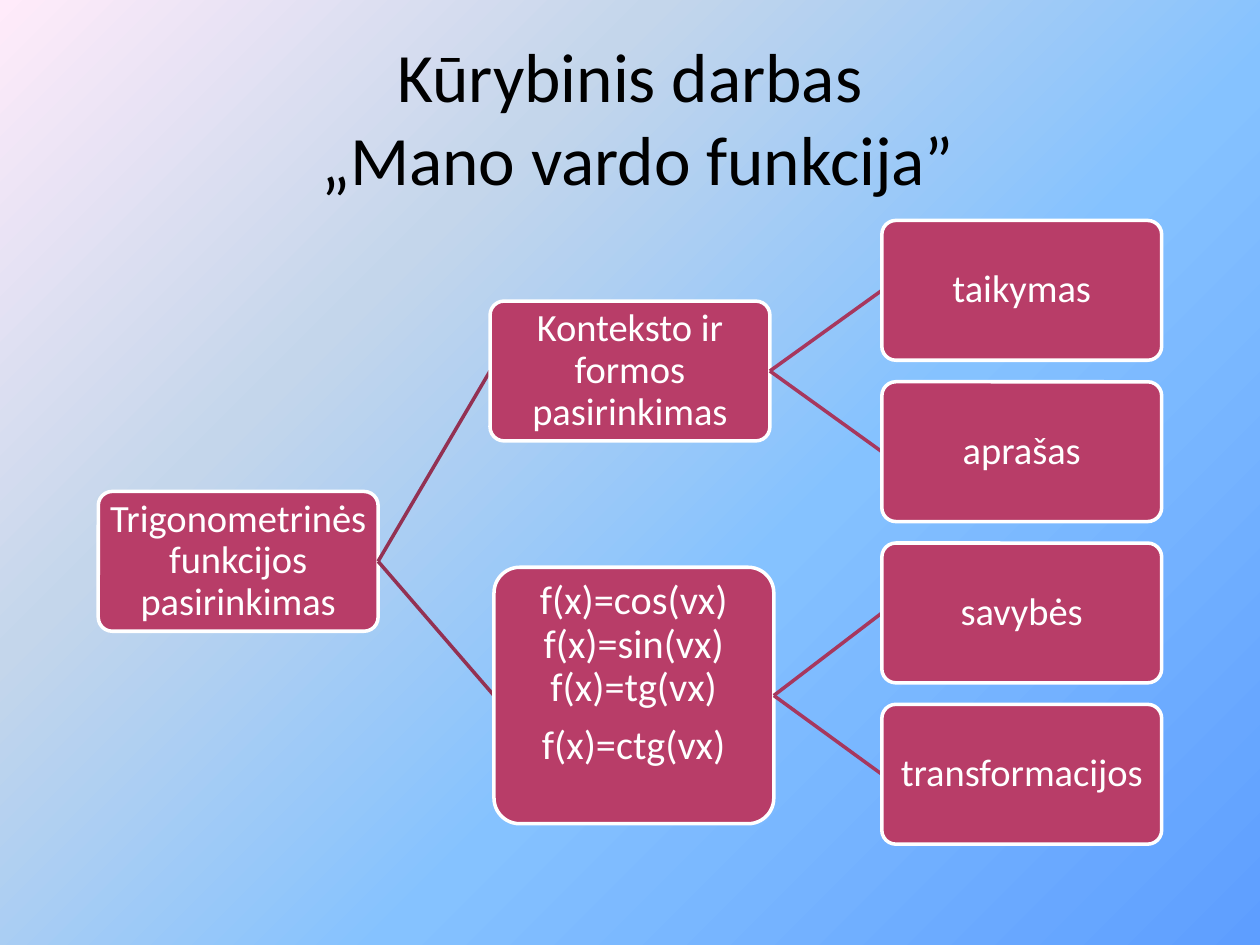
import dataclasses

import lxml.etree
import pptx
import pptx.dml.color
import pptx.enum.shapes
import pptx.enum.text
import pptx.oxml.ns
import pptx.util


@dataclasses.dataclass(frozen=True)
class Theme:
    font: str = "Calibri"
    title_size: float = 39.6
    node_size: float = 22
    formula_size: float = 23
    line_width: float = 2
    title_color: str = "000000"
    node_color: str = "B83D68"
    light: str = "FFFFFF"
    branch_colors: tuple = ("933153", "A7375E")
    background: tuple = ((0, "5E9EFF"), (40, "85C2FF"), (70, "C4D6EB"), (100, "FFEBFA"))
    background_angle: int = 135


@dataclasses.dataclass(frozen=True)
class Box:
    left: float
    top: float
    width: float
    height: float

    def emu(self):
        return [pptx.util.Emu(round(length)) for length in dataclasses.astuple(self)]

    def share(self, left, top, width, height):
        return Box(self.left + left * self.width, self.top + top * self.height,
                   width * self.width, height * self.height)


@dataclasses.dataclass(frozen=True)
class Node:
    paragraphs: tuple
    column: float
    row: float
    children: tuple = ()
    row_span: float = 13 / 15
    formula: bool = False


THEME = Theme()
COLUMN_SPAN = 5 / 7
ROW_SPAN = 13 / 15
TREE = Node(("Trigonometrinės funkcijos pasirinkimas",), 0, 1.68, (
    Node(("Konteksto ir formos pasirinkimas",), 1, 0.5, (
        Node(("taikymas",), 2, 0),
        Node(("aprašas",), 2, 1),
    )),
    Node(("f(x)=cos(vx) f(x)=sin(vx) f(x)=tg(vx)", "f(x)=ctg(vx)"), 1.01, 2.15, (
        Node(("savybės",), 2, 2),
        Node(("transformacijos",), 2, 3),
    ), 1.59, True),
))


def rgb(color):
    return pptx.dml.color.RGBColor.from_string(color)


def add_run(paragraph, text, size, color):
    run = paragraph.add_run()
    run.text = text
    run.font.name = THEME.font
    run.font.size = pptx.util.Pt(size)
    run.font.color.rgb = rgb(color)


def paint_background(slide):
    fill = slide.background.fill
    fill.gradient()
    fill.gradient_angle = THEME.background_angle
    qn = pptx.oxml.ns.qn
    stops = slide.background._cSld.find(".//" + qn("a:gsLst"))
    for stop in list(stops):
        stops.remove(stop)
    for position, color in THEME.background:
        stop = lxml.etree.SubElement(stops, qn("a:gs"), pos=str(position * 1000))
        lxml.etree.SubElement(stop, qn("a:srgbClr"), val=color)


def add_title(slide, box, lines):
    shape = slide.shapes.add_textbox(*box.emu())
    frame = shape.text_frame
    frame.word_wrap = True
    frame.vertical_anchor = pptx.enum.text.MSO_ANCHOR.MIDDLE
    paragraph = frame.paragraphs[0]
    paragraph.alignment = pptx.enum.text.PP_ALIGN.CENTER
    for index, line in enumerate(lines):
        if index:
            paragraph.add_line_break()
        add_run(paragraph, line, THEME.title_size, THEME.title_color)


def add_branch(slide, parent, child, color):
    ends = (parent.left + parent.width, parent.top + parent.height / 2,
            child.left, child.top + child.height / 2)
    connector = slide.shapes.add_connector(
        pptx.enum.shapes.MSO_CONNECTOR.STRAIGHT, *(round(end) for end in ends))
    connector.line.color.rgb = rgb(color)
    connector.line.width = pptx.util.Pt(THEME.line_width)
    lxml.etree.SubElement(connector._element.spPr, pptx.oxml.ns.qn("a:effectLst"))


def add_node(slide, box, node):
    shape = slide.shapes.add_shape(
        pptx.enum.shapes.MSO_SHAPE.ROUNDED_RECTANGLE, *box.emu())
    shape.adjustments[0] = 0.1
    shape.shadow.inherit = False
    shape.fill.solid()
    shape.fill.fore_color.rgb = rgb(THEME.node_color)
    shape.line.color.rgb = rgb(THEME.light)
    shape.line.width = pptx.util.Pt(THEME.line_width)
    frame = shape.text_frame
    frame.word_wrap = True
    frame.margin_left = frame.margin_right = pptx.util.Pt(1)
    frame.margin_top = frame.margin_bottom = pptx.util.Pt(3 if node.formula else 1)
    anchors = pptx.enum.text.MSO_ANCHOR
    frame.vertical_anchor = anchors.TOP if node.formula else anchors.MIDDLE
    size = THEME.formula_size if node.formula else THEME.node_size
    for index, text in enumerate(node.paragraphs):
        paragraph = frame.add_paragraph() if index else frame.paragraphs[0]
        paragraph.alignment = pptx.enum.text.PP_ALIGN.CENTER
        paragraph.line_spacing = 0.9
        paragraph.space_before = pptx.util.Pt(8 if index else 0)
        add_run(paragraph, text, size, THEME.light)


def add_tree(slide, box, node, level=0):
    columns, rows = 2 + COLUMN_SPAN, 3 + ROW_SPAN

    def place(member):
        return box.share(member.column / columns, member.row / rows,
                         COLUMN_SPAN / columns, member.row_span / rows)

    if level == 0:
        add_node(slide, place(node), node)
    for child in node.children:
        add_branch(slide, place(node), place(child), THEME.branch_colors[level])
        add_node(slide, place(child), child)
        add_tree(slide, box, child, level + 1)


def main():
    presentation = pptx.Presentation()
    presentation.slide_width = pptx.util.Inches(10)
    presentation.slide_height = pptx.util.Inches(7.5)
    slide = presentation.slides.add_slide(presentation.slide_layouts[6])
    page = Box(0, 0, presentation.slide_width, presentation.slide_height)
    paint_background(slide)
    add_title(slide, page.share(0.05, 0.04, 0.9, 1 / 6),
              ("Kūrybinis darbas", " „Mano vardo funkcija”"))
    add_tree(slide, page.share(0.078, 7 / 30, 0.844, 0.66), TREE)
    presentation.save("out.pptx")


if __name__ == "__main__":
    main()
